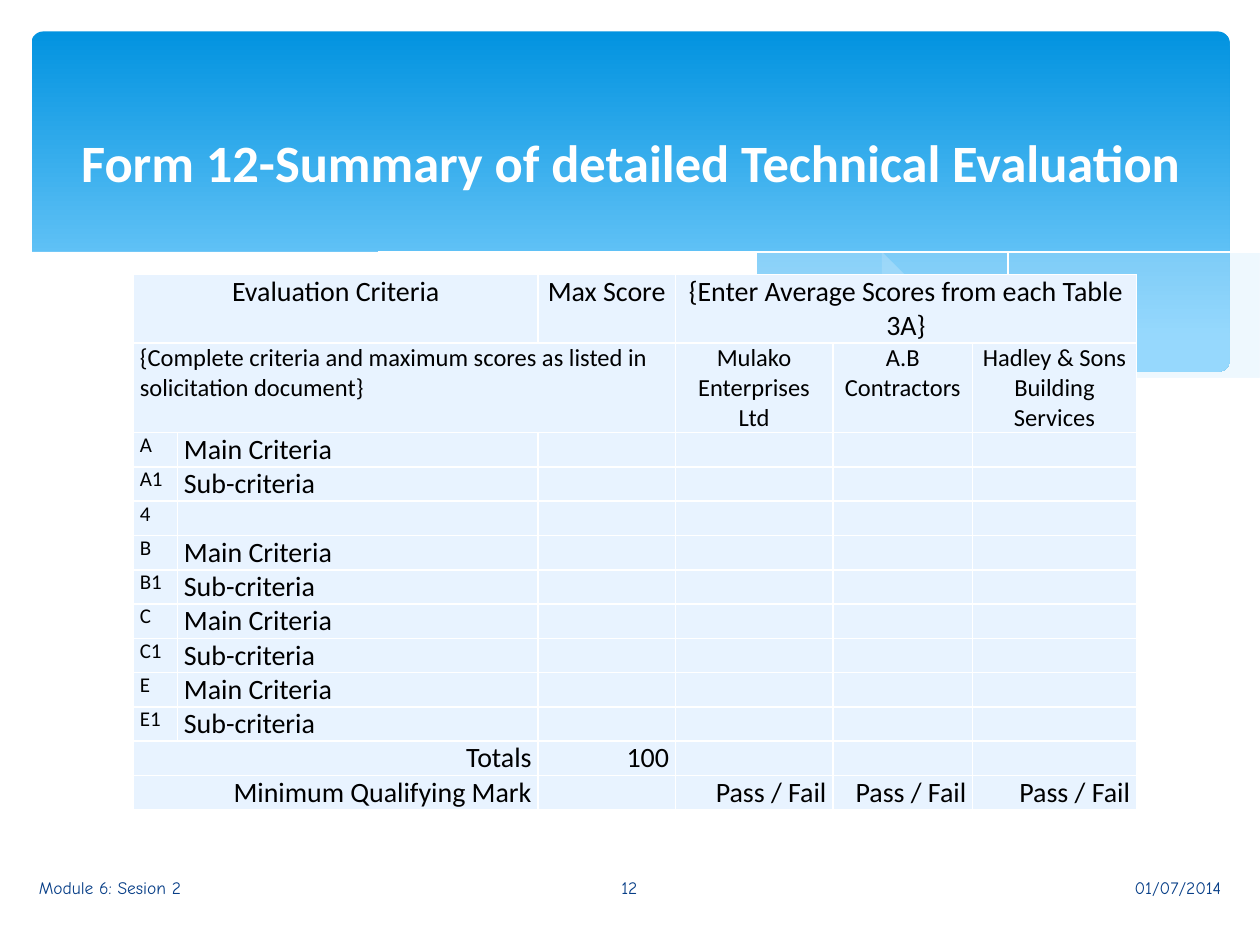
"""Build the Form 12 technical evaluation summary slide."""
from lxml.etree import SubElement
from pptx import Presentation
from pptx.dml.color import RGBColor
from pptx.enum.shapes import MSO_SHAPE as SHAPE
from pptx.enum.text import MSO_ANCHOR as ANCHOR, PP_ALIGN as ALIGN
from pptx.oxml.ns import qn
from pptx.util import Inches, Pt

COLORS = {"sky": "0293E0", "sky_light": "83D3FE", "mist": "C6E7FC",
          "white": "FFFFFF", "cell": "E8F3FF", "text": "000000", "footer": "073E87"}
TITLE = "Form 12-Summary of detailed Technical Evaluation"
HEADINGS = [
    (0, 0, 2, "Evaluation Criteria", 16, ALIGN.CENTER),
    (0, 2, 1, "Max Score", 16, ALIGN.CENTER),
    (0, 3, 3, "{Enter Average Scores from each Table 3A}", 16, ALIGN.CENTER),
    (1, 0, 3, "{Complete criteria and maximum scores as listed in solicitation document}",
     14, ALIGN.LEFT),
]
BIDDERS = ["Mulako Enterprises Ltd", "A.B Contractors", "Hadley & Sons Building Services"]
CRITERIA = [("A", "Main Criteria"), ("A1", "Sub-criteria"), ("4", ""),
            ("B", "Main Criteria"), ("B1", "Sub-criteria"),
            ("C", "Main Criteria"), ("C1", "Sub-criteria"),
            ("E", "Main Criteria"), ("E1", "Sub-criteria")]
SUMMARY = [("Totals", "100", ""), ("Minimum Qualifying Mark", "", "Pass / Fail")]
FOOTERS = [("01/07/2014", 5.65, 4.14, ALIGN.RIGHT),
           ("Module 6: Sesion 2", 0.21, 4.14, ALIGN.LEFT),
           ("12", 4.36, 1.27, ALIGN.CENTER)]
COLUMNS = [0.35, 2.86, 1.09, 1.25, 1.11, 1.3]
ROWS = [0.54, 0.71] + [0.27] * (len(CRITERIA) + len(SUMMARY))

RIGHT_WAVE = [
    [(9.76, 1.99), (9.21, 2.1), (8.61, 2.23), (7.79, 2.42), (7.06, 2.57), (6.61, 2.65)],
    [(6.61, 2.65), (7.18, 2.72), (7.69, 2.77), (8.14, 2.78), (8.63, 2.75),
     (9.05, 2.69), (9.42, 2.59), (9.76, 2.47)]]
MIDDLE_WAVE = [
    [(8.93, 2.73), (8.37, 2.65), (7.41, 2.48), (6.29, 2.22), (5.69, 2.08), (5.14, 1.98),
     (4.42, 1.89), (3.8, 1.86), (3.28, 1.87), (2.86, 1.91)],
    [(2.86, 1.91), (3.42, 1.99), (4.04, 2.11), (4.91, 2.32), (5.66, 2.48), (6.5, 2.64),
     (7.22, 2.74), (7.85, 2.78), (8.38, 2.78), (8.93, 2.73)]]
LEFT_CREST = [[(3.09, 1.95), (3.53, 1.89), (4.16, 1.87), (4.89, 1.9), (5.82, 2),
               (6.65, 2.13), (7.6, 2.33), (8.31, 2.51), (9.07, 2.72)]]
RIGHT_CREST = [[(6.13, 2.57), (6.95, 2.35), (7.76, 2.16), (8.66, 1.99),
                (9.24, 1.9), (9.75, 1.85)]]
FRONT_WAVE = [
    [(9.77, 2.46), (9.4, 2.59), (8.99, 2.69), (8.5, 2.75), (8.09, 2.77), (7.44, 2.74),
     (6.68, 2.65), (5.79, 2.5), (5.03, 2.33), (4.18, 2.13), (3.39, 1.97), (2.71, 1.88),
     (2.11, 1.84), (1.61, 1.84), (1.06, 1.89), (0.67, 1.97), (0.4, 2.05), (0.23, 2.13)],
    [(0.23, 3.29), (9.77, 3.29)]]
WAVES = [(RIGHT_WAVE, "mist", 29), (MIDDLE_WAVE, "mist", 40),
         (LEFT_CREST, None, None), (RIGHT_CREST, None, None), (FRONT_WAVE, "white", 100)]


def rgb(name):
    return RGBColor.from_string(COLORS[name])


def write(frame, text, size=16, color="text", font="Calibri", bold=False, align=ALIGN.LEFT):
    paragraph = frame.paragraphs[0]
    paragraph.alignment = align
    if not text:
        SubElement(paragraph._p, qn("a:endParaRPr"), sz=str(size * 100))
        return
    run = paragraph.add_run()
    run.text = text
    run.font.size, run.font.name, run.font.bold = Pt(size), font, bold
    run.font.color.rgb = rgb(color)


def smooth(knots, steps=5):
    """Return points on a Catmull-Rom curve through the knots."""
    if len(knots) < 3:
        return knots
    padded = [knots[0], *knots, knots[-1]]
    points = [knots[0]]
    for a, b, c, d in zip(padded, padded[1:], padded[2:], padded[3:]):
        for step in range(1, steps + 1):
            t = step / steps
            points.append(tuple(
                (2 * q + (r - p) * t + (2 * p - 5 * q + 4 * r - s) * t ** 2
                 + (3 * q - p - 3 * r + s) * t ** 3) / 2
                for p, q, r, s in zip(a, b, c, d)))
    return points


def add_wave(slide, curves, color, opacity):
    points = [point for knots in curves for point in smooth(knots)]
    builder = slide.shapes.build_freeform(*points[0], scale=Inches(1))
    builder.add_line_segments(points[1:], close=color is not None)
    wave = builder.convert_to_shape()
    wave.shadow.inherit = False
    if color is None:
        wave.fill.background()
        wave.line.color.rgb = rgb("white")
        wave.line.width = Pt(0)
        return
    wave.fill.solid()
    wave.fill.fore_color.rgb = rgb(color)
    wave.line.fill.background()
    if opacity < 100:
        tint = wave._element.spPr.find(qn("a:solidFill"))[0]
        SubElement(tint, qn("a:alpha"), val=str(opacity * 1000))


def add_banner(slide):
    banner = slide.shapes.add_shape(SHAPE.ROUNDED_RECTANGLE, Inches(0.25), Inches(0.25),
                                    Inches(9.51), Inches(2.7))
    banner.adjustments[0] = 0.034
    banner.shadow.inherit = False
    banner.line.fill.background()
    banner.fill.gradient()
    banner.fill.gradient_angle = 270
    for stop, color, position in zip(banner.fill.gradient_stops, ("sky", "sky_light"), (0, 0.9)):
        stop.color.rgb = rgb(color)
        stop.position = position
    for wave in WAVES:
        add_wave(slide, *wave)


def style_cell(cell):
    cell.margin_left = cell.margin_right = Inches(0.05)
    cell.margin_top = cell.margin_bottom = 0
    for side in ("lnL", "lnR", "lnT", "lnB"):
        border = SubElement(cell._tc.get_or_add_tcPr(), qn(f"a:{side}"), w=str(Pt(1)))
        SubElement(SubElement(border, qn("a:solidFill")), qn("a:srgbClr"), val=COLORS["white"])
    cell.fill.solid()
    cell.fill.fore_color.rgb = rgb("cell")


def add_scores(slide):
    entries = list(HEADINGS)
    entries += [(1, 3 + i, 1, name, 14, ALIGN.CENTER) for i, name in enumerate(BIDDERS)]
    for row, (code, label) in enumerate(CRITERIA, 2):
        entries += [(row, 0, 1, code, 12, ALIGN.LEFT), (row, 1, 1, label, 16, ALIGN.LEFT)]
        entries += [(row, column, 1, "", 16, ALIGN.LEFT) for column in range(2, 6)]
    for row, (label, score, result) in enumerate(SUMMARY, 2 + len(CRITERIA)):
        entries += [(row, 0, 2, label, 16, ALIGN.RIGHT), (row, 2, 1, score, 16, ALIGN.RIGHT)]
        entries += [(row, column, 1, result, 16, ALIGN.RIGHT) for column in range(3, 6)]

    scores = slide.shapes.add_table(len(ROWS), len(COLUMNS), Inches(1.06), Inches(2.18),
                                    Inches(sum(COLUMNS)), Inches(sum(ROWS))).table
    scores.first_row = scores.horz_banding = False
    for column, width in zip(scores.columns, COLUMNS):
        column.width = Inches(width)
    for row, height in zip(scores.rows, ROWS):
        row.height = Inches(height)
    for cell in scores.iter_cells():
        style_cell(cell)
    for row, column, span, text, size, align in entries:
        cell = scores.cell(row, column)
        if span > 1:
            cell.merge(scores.cell(row, column + span - 1))
        write(cell.text_frame, text, size=size, align=align)


def main():
    deck = Presentation()
    deck.slide_width, deck.slide_height = Inches(10), Inches(7.5)
    slide = deck.slides.add_slide(deck.slide_layouts[5])
    add_banner(slide)
    add_scores(slide)

    title = slide.shapes.title
    title.left, title.top, title.width, title.height = map(Inches, (0.51, 0.6, 9, 1.37))
    title.text_frame.vertical_anchor = ANCHOR.MIDDLE
    write(title.text_frame, TITLE, size=30, color="white", bold=True, align=ALIGN.CENTER)
    slide.shapes._spTree.append(title._element)

    for text, left, width, align in FOOTERS:
        footer = slide.shapes.add_textbox(Inches(left), Inches(6.84), Inches(width), Inches(0.4))
        footer.text_frame.word_wrap = True
        footer.text_frame.vertical_anchor = ANCHOR.MIDDLE
        write(footer.text_frame, text, size=10, color="footer", font="Comic Neue", align=align)
    deck.save("out.pptx")


if __name__ == "__main__":
    main()
